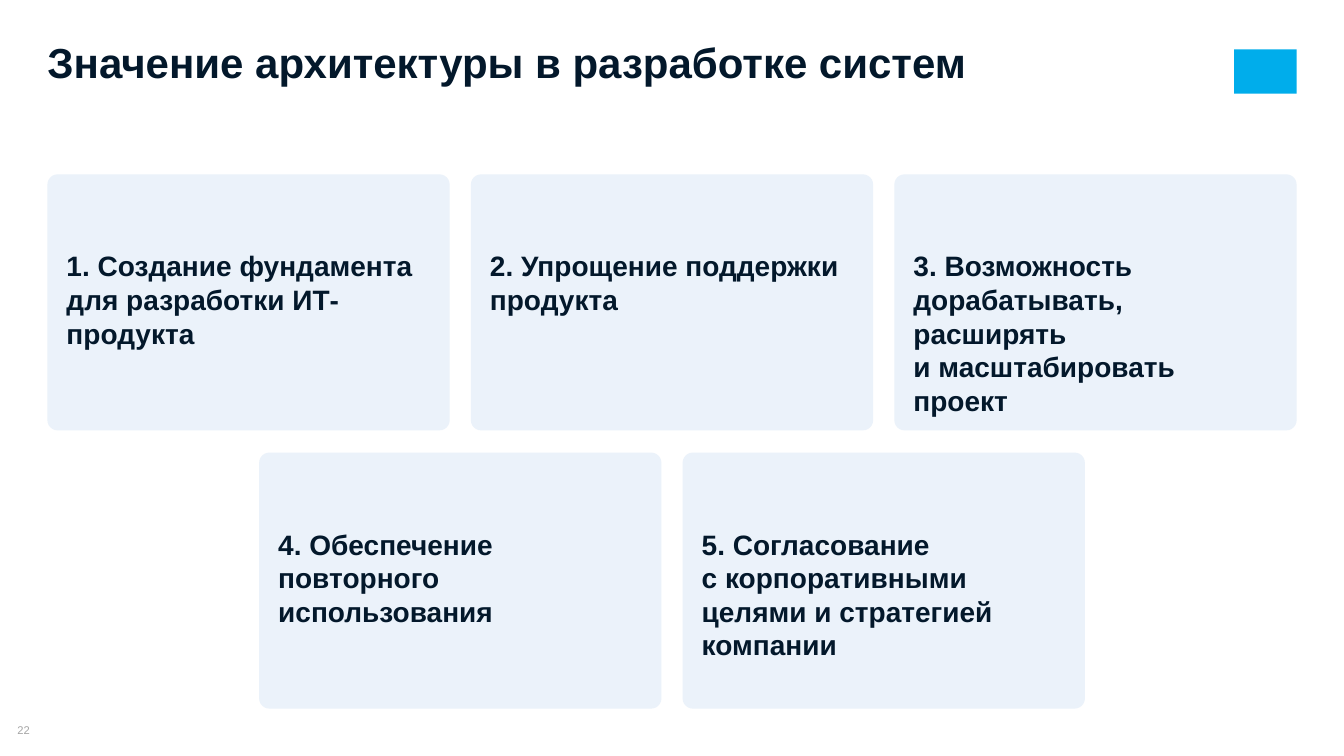
import pptx
import pptx.dml.color
import pptx.enum.shapes
import pptx.enum.text
import pptx.util

NAVY = pptx.dml.color.RGBColor(0x03, 0x18, 0x2B)
PALE_BLUE = pptx.dml.color.RGBColor(0xEB, 0xF2, 0xFA)
CYAN = pptx.dml.color.RGBColor(0x00, 0xAD, 0xEB)
GREY = pptx.dml.color.RGBColor(0xA6, 0xA6, 0xA6)

SCALE = 9144
MARGIN = 47
CARD_WIDTH, CARD_HEIGHT = 399, 254
COLUMN_STEP, ROW_STEP = 420, 276
CARDS_TOP = 173

CARD_ROWS = [
    [
        ["1. Создание фундамента", "для разработки ИТ-продукта"],
        ["2. Упрощение поддержки продукта"],
        ["3. Возможность дорабатывать, расширять", "и масштабировать проект"],
    ],
    [
        ["4. Обеспечение повторного использования"],
        ["5. Согласование", "с корпоративными целями и стратегией компании"],
    ],
]


class SlideBuilder:
    """Draws styled elements on one slide, with lengths in hundredths of an inch."""

    font_name = "Arial"

    def __init__(self, deck):
        self.page = deck.slides.add_slide(deck.slide_layouts[5])

    def lengths(self, *pixels):
        return [pptx.util.Emu(pixel * SCALE) for pixel in pixels]

    def fill_text(self, box, lines, size, color, bold, insets, align, anchor):
        frame = box.text_frame
        frame.word_wrap = True
        frame.auto_size = pptx.enum.text.MSO_AUTO_SIZE.NONE
        frame.vertical_anchor = anchor
        (frame.margin_left, frame.margin_top,
         frame.margin_right, frame.margin_bottom) = self.lengths(*insets)
        para = frame.paragraphs[0]
        para.alignment = align
        for index, line in enumerate(lines):
            if index:
                para.add_line_break()
            span = para.add_run()
            span.text = line
            span.font.name = self.font_name
            span.font.size = pptx.util.Pt(size)
            span.font.bold = bold
            span.font.color.rgb = color
        return para

    def title(self, text, left, top, width, height):
        box = self.page.shapes.title
        box.left, box.top, box.width, box.height = self.lengths(left, top, width, height)
        para = self.fill_text(box, [text], 30, NAVY, True, (0, 0, 0, 0),
                              pptx.enum.text.PP_ALIGN.LEFT, pptx.enum.text.MSO_ANCHOR.TOP)
        para.line_spacing = 0.8

    def block(self, kind, color, left, top, width, height):
        box = self.page.shapes.add_shape(kind, *self.lengths(left, top, width, height))
        box.shadow.inherit = False
        box.fill.solid()
        box.fill.fore_color.rgb = color
        box.line.fill.background()
        return box

    def card(self, lines, left, top):
        box = self.block(pptx.enum.shapes.MSO_SHAPE.ROUNDED_RECTANGLE, PALE_BLUE,
                         left, top, CARD_WIDTH, CARD_HEIGHT)
        box.adjustments[0] = 0.04
        para = self.fill_text(box, lines, 20, NAVY, True, (16, 71, 16, 16),
                              pptx.enum.text.PP_ALIGN.LEFT, pptx.enum.text.MSO_ANCHOR.TOP)
        para.space_after = pptx.util.Pt(6)

    def page_number(self, text, left, top, width, height):
        box = self.page.shapes.add_textbox(*self.lengths(left, top, width, height))
        self.fill_text(box, [text], 8, GREY, False, (0, 0, 0, 0),
                       pptx.enum.text.PP_ALIGN.CENTER, pptx.enum.text.MSO_ANCHOR.MIDDLE)


def main():
    deck = pptx.Presentation()
    deck.slide_width = pptx.util.Emu(1333 * SCALE)
    deck.slide_height = pptx.util.Emu(750 * SCALE)
    slide = SlideBuilder(deck)

    slide.title("Значение архитектуры в разработке систем", MARGIN, 46, 1051, 41)
    slide.block(pptx.enum.shapes.MSO_SHAPE.RECTANGLE, CYAN, 1224, 49, 62, 44)
    slide.page_number("22", 0, 718, 47, 13)

    longest = max(len(cards) for cards in CARD_ROWS)
    for row, cards in enumerate(CARD_ROWS):
        row_left = MARGIN + (longest - len(cards)) * COLUMN_STEP // 2
        for column, lines in enumerate(cards):
            slide.card(lines, row_left + column * COLUMN_STEP, CARDS_TOP + row * ROW_STEP)

    deck.save("out.pptx")


if __name__ == "__main__":
    main()
